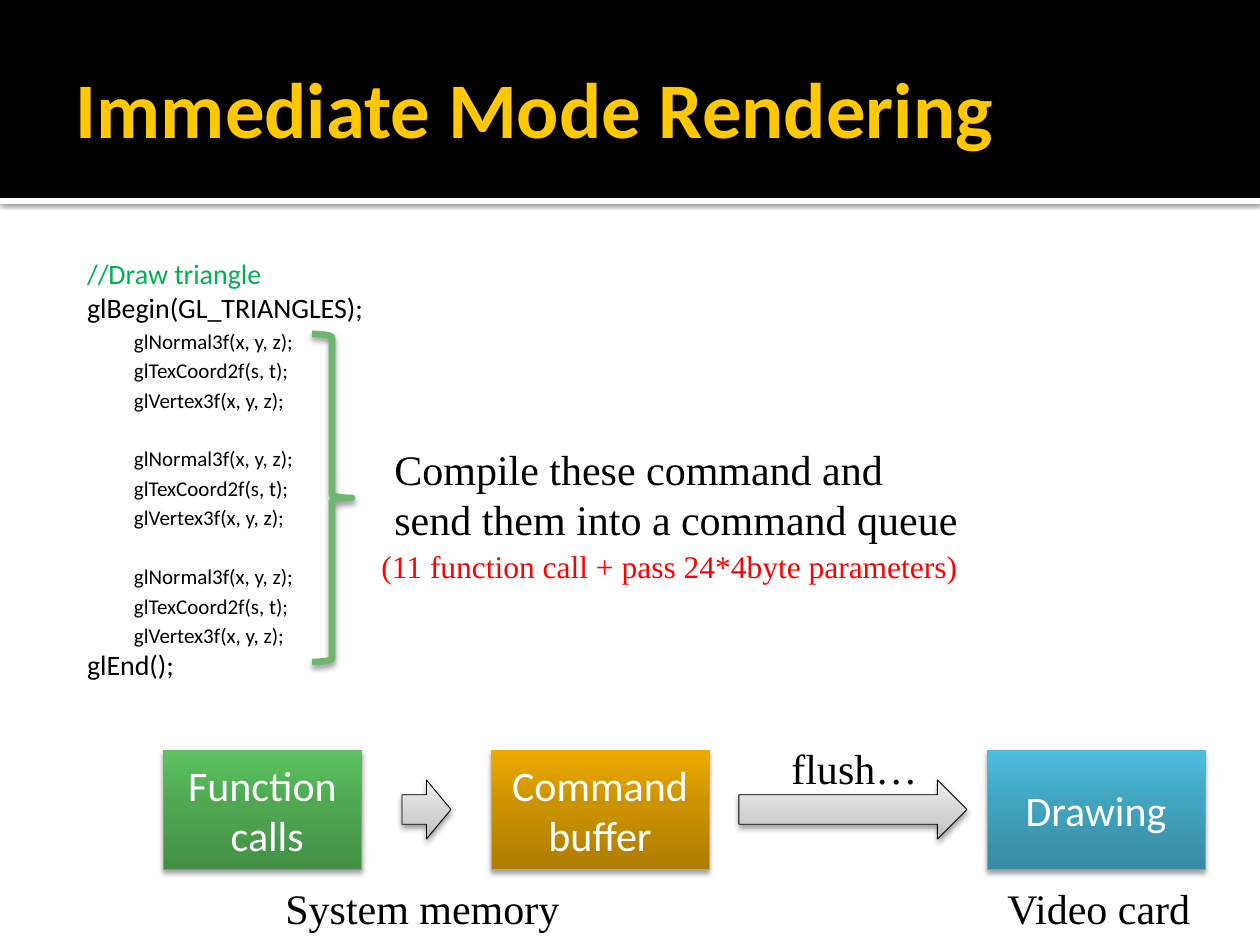
from copy import deepcopy

from lxml.etree import SubElement
from pptx import Presentation
from pptx.dml.color import RGBColor
from pptx.enum.shapes import MSO_SHAPE
from pptx.enum.text import MSO_ANCHOR, MSO_AUTO_SIZE, PP_ALIGN
from pptx.oxml.ns import qn
from pptx.util import Emu, Pt

PX = 914400 / 126
SERIF, SANS = "Times New Roman", "Calibri"


def px(*lengths):
    return [Emu(round(length * PX)) for length in lengths]


def style(para, text, size, color, font=SANS):
    """Fill a paragraph and set its font."""
    para.text = text
    para.font.size = Pt(size)
    para.font.name = font
    para.font.color.rgb = RGBColor.from_string(color)


deck = Presentation()
deck.slide_width, deck.slide_height = px(1260, 945)
page = deck.slides.add_slide(deck.slide_layouts[1])
title, code = page.placeholders
shapes = page.shapes

# Header: white strip with a shadow under a black band
strip = shapes.add_shape(MSO_SHAPE.RECTANGLE, *px(0, 198, 1260, 6))
band = shapes.add_shape(MSO_SHAPE.RECTANGLE, *px(0, 0, 1260, 198))
for bar, color in ((strip, "FFFFFF"), (band, "000000")):
    bar.fill.solid()
    bar.fill.fore_color.rgb = RGBColor.from_string(color)
    bar.line.fill.background()
    bar.shadow.inherit = False
    shapes._spTree.remove(bar._element)
    shapes._spTree.insert_element_before(bar._element, "p:extLst")
for holder in (title, code):
    shapes._spTree.append(holder._element)

title.left, title.top, title.width, title.height = px(63, 21, 1134, 173)
frame = title.text_frame
frame.auto_size = MSO_AUTO_SIZE.NONE
frame.vertical_anchor = MSO_ANCHOR.MIDDLE
frame.margin_left, frame.margin_right = px(13, 6)
style(frame.paragraphs[0], "Immediate Mode Rendering", 45, "FFC800")
frame.paragraphs[0].font.bold = True
frame.paragraphs[0].alignment = PP_ALIGN.LEFT

# Code listing: (text, color, size, indent, space before)
VERTEX = ("glNormal3f(x, y, z);", "glTexCoord2f(s, t);", "glVertex3f(x, y, z);")
lines = [("//Draw triangle", "00B050", 16, 16, 0),
         ("glBegin(GL_TRIANGLES);", "000000", 16, 16, 0)]
for vertex in range(3):
    for row, call in enumerate(VERTEX):
        new_group = vertex > 0 and row == 0
        lines.append((call, "000000", 12, 63, 19.2 if new_group else 2.4))
lines.append(("glEnd();", "000000", 16, 16, 0))

code.left, code.top, code.width, code.height = px(63, 244, 1134, 638)
frame = code.text_frame
frame.auto_size = MSO_AUTO_SIZE.NONE
frame.margin_left, frame.margin_top = px(8, 13)
for number, (text, color, size, indent, before) in enumerate(lines):
    para = frame.add_paragraph() if number else frame.paragraphs[0]
    style(para, text, size, color)
    para.level = int(size == 12)
    para.space_before = Pt(before)
    properties = para._p.get_or_add_pPr()
    properties.set("marL", str(px(indent)[0]))
    properties.set("indent", "0")
    properties.insert_element_before(
        properties.makeelement(qn("a:buNone")), "a:tabLst", "a:defRPr", "a:extLst")

brace = shapes.add_shape(MSO_SHAPE.RIGHT_BRACE, *px(312, 334, 40, 328))
brace.fill.background()
brace.line.color.rgb = RGBColor.from_string("6BB76D")
brace.line.width = Pt(3.78)

# Pipeline: (preset, left, top, width, height, gradient, line color, text)
GREY = ("BDBDBD", "D1D1D1", "EEEEEE")
BOX, ARROW = MSO_SHAPE.RECTANGLE, MSO_SHAPE.RIGHT_ARROW
steps = [
    (BOX, 163, 750, 199, 119, ("438F45", "4FA851", "5CC35F"), "67B569", "Function\v calls"),
    (BOX, 491, 750, 218, 119, ("AE7D00", "CC9300", "EEAB00"), "EBA900", "Command buffer"),
    (ARROW, 402, 780, 49, 59, GREY, "000000", ""),
    (ARROW, 739, 780, 228, 59, GREY, "000000", ""),
    (BOX, 987, 750, 218, 119, ("378BA2", "41A4BF", "4BBFDE"), "5BB3CA", "Drawing"),
]
shadowed = [(strip, 60, 2.5, 0.8), (brace, 38, 3.5, 2)]
for preset, left, top, width, height, gradient, line_color, text in steps:
    step = shapes.add_shape(preset, *px(left, top, width, height))
    step.fill.gradient()
    step.fill.gradient_angle = 90
    stop_list = step._element.spPr.find(qn("a:gradFill")).find(qn("a:gsLst"))
    stop_list.append(deepcopy(stop_list[-1]))
    middle = 0.35 if preset == ARROW else 0.55
    for stop, position, color in zip(step.fill.gradient_stops, (0, middle, 1), gradient):
        stop.position = position
        stop.color.rgb = RGBColor.from_string(color)
    step.line.color.rgb = RGBColor.from_string(line_color)
    step.line.width = Pt(0.5)
    shadowed.append((step, 38, 3.5 if preset == ARROW else 3.1, 2))
    if text:
        step.text_frame.vertical_anchor = MSO_ANCHOR.MIDDLE
        para = step.text_frame.paragraphs[0]
        style(para, text, 24, "FFFFFF")
        para.alignment = PP_ALIGN.CENTER

for shape, opacity, blur, distance in shadowed:
    shape.shadow.inherit = False
    effects = shape._element.spPr.find(qn("a:effectLst"))
    shadow = SubElement(effects, qn("a:outerShdw"), blurRad=str(Pt(blur)),
                        dist=str(Pt(distance)), dir="5400000", rotWithShape="0")
    shade = SubElement(shadow, qn("a:srgbClr"), val="000000")
    SubElement(shade, qn("a:alpha"), val=str(opacity * 1000))

# Captions: (left, top, width, height, text, size, color)
captions = [
    (382, 437, 593, 115, "Compile these command and\vsend them into a command queue", 24, "000000"),
    (779, 736, 152, 63, "flush…", 24, "000000"),
    (273, 876, 302, 63, "System memory", 24, "000000"),
    (995, 876, 210, 63, "Video card", 24, "000000"),
    (369, 541, 607, 50, "(11 function call + pass 24*4byte parameters)", 18, "FF0000"),
]
for left, top, width, height, text, size, color in captions:
    box = shapes.add_textbox(*px(left, top, width, height))
    box.text_frame.word_wrap = False
    box.text_frame.auto_size = MSO_AUTO_SIZE.SHAPE_TO_FIT_TEXT
    style(box.text_frame.paragraphs[0], text, size, color, SERIF)

deck.save("out.pptx")
